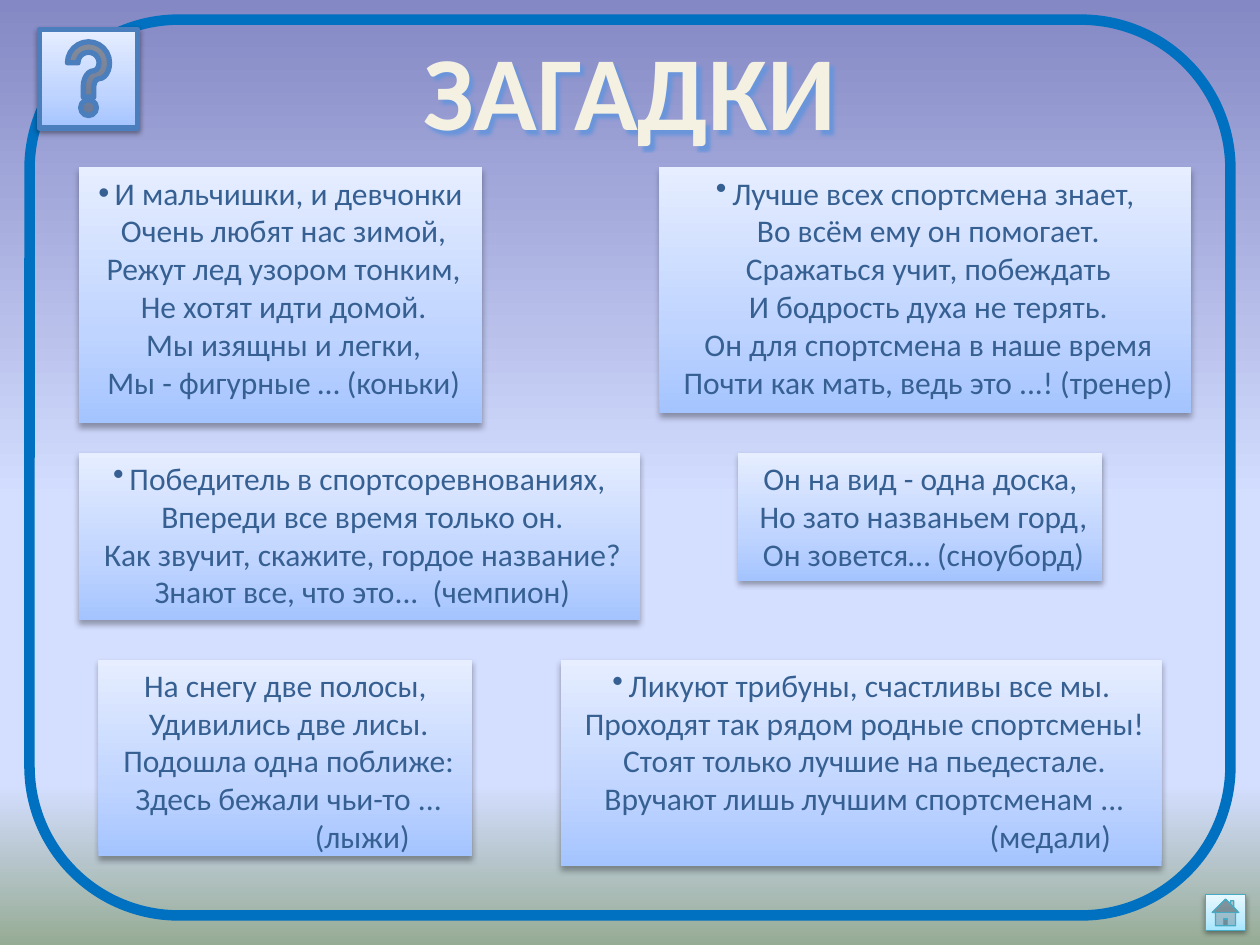
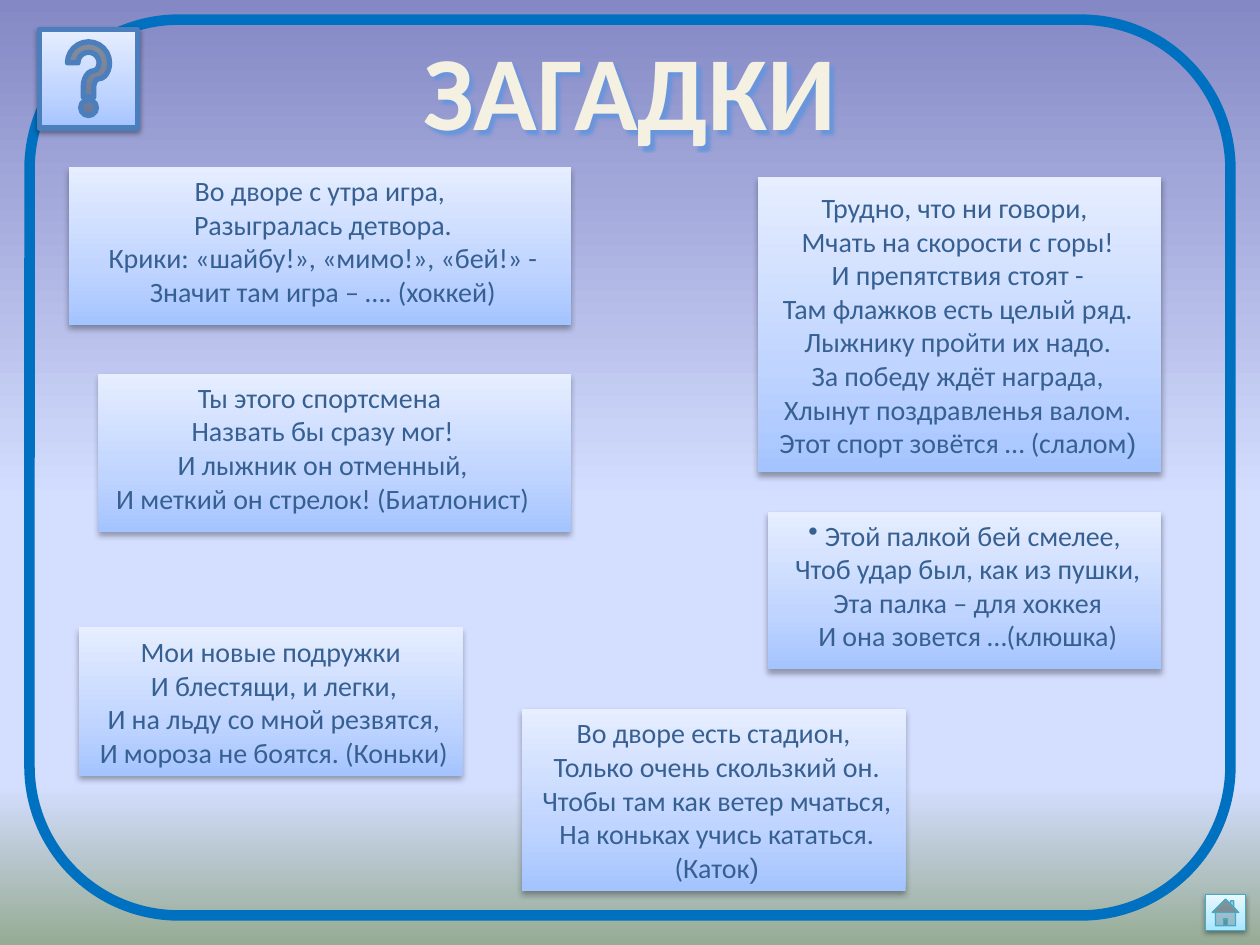
"""Build two slides of sports riddles on shared framed pages."""
from lxml import etree
from pptx import Presentation, util as u
from pptx.dml.color import RGBColor
from pptx.enum import shapes, text
from pptx.oxml.ns import qn

TITLE = "ЗАГАДКИ"
FONT, CLOSING_FONT = "Calibri", "Arial"
TEXT, CREAM, TITLE_EDGE, TITLE_SHADE = "376092", "F4F1E3", "054697", "6A95DB"
FRAME, HELP_EDGE, HOME_EDGE = "0070C0", "4B7EBC", "46AAC5"
SKY = [(0, "8488C4"), (53, "D4DEFF"), (83, "D4DEFF"), (100, "96AB94")]
BLUE = [(0, "A4C4FF"), (35, "BFD4FF"), (100, "E6EEFF")]
AQUA = [(0, "A7E6FF"), (35, "C1EDFF"), (100, "E7F8FF")]
CARD_SHADOW = dict(color="000000", alpha=32, blur=3.5, dist=2.2, angle=90)
BUTTON_SHADOW = dict(color="000000", alpha=38, blur=3.1, dist=1.6, angle=90)
TITLE_SHADOW = dict(color=TITLE_SHADE, alpha=100, blur=1, dist=2.5, angle=45)

COLUMNS, ROWS = 128, 96
WIDTH, HEIGHT = u.Inches(10), u.Inches(7.5)
TITLE_PLACE, FRAME_PLACE = (22, 3, 84, 12), (3, 2, 122, 91)
BUTTONS = [
    (shapes.MSO_SHAPE.ACTION_BUTTON_HELP, (4, 3, 10, 10), BLUE, HELP_EDGE, 3),
    (shapes.MSO_SHAPE.ACTION_BUTTON_HOME, (122.5, 90.9, 4, 3.6), AQUA, HOME_EDGE, 0.75),
]
LINE_INDENT, BULLET_INDENT = 0.05, 0.13
TOP, MIDDLE = text.MSO_ANCHOR.TOP, text.MSO_ANCHOR.MIDDLE

PAGES = [
    dict(size=18, cards=[
        dict(place=(8, 17, 41, 26), bullet=True, lines=[
            "И мальчишки, и девчонки", "Очень любят нас зимой,",
            "Режут лед узором тонким,", "Не хотят идти домой.",
            "Мы изящны и легки,", "Мы - фигурные … (коньки)"]),
        dict(place=(67, 17, 54, 25), bullet=True, lines=[
            "Лучше всех спортсмена знает,", "Во всём ему он помогает.",
            "Сражаться учит, побеждать", "И бодрость духа не терять.",
            "Он для спортсмена в наше время",
            "Почти как мать, ведь это ...! (тренер)"]),
        dict(place=(8, 46, 57, 17), bullet=True, lines=[
            "Победитель в спортсоревнованиях,", "Впереди все время только он.",
            "Как звучит, скажите, гордое название?",
            "Знают все, что это...  (чемпион)"]),
        dict(place=(75, 46, 37, 13), lines=[
            "Он на вид - одна доска,", "Но зато названьем горд,",
            "Он зовется… (сноуборд)"]),
        dict(place=(10, 67, 38, 20), answer_indent=1.22, lines=[
            "На снегу две полосы,", "Удивились две лисы.",
            "Подошла одна поближе:", "Здесь бежали чьи-то ...", "(лыжи)"]),
        dict(place=(57, 67, 61, 21), bullet=True, answer_indent=3, lines=[
            "Ликуют трибуны, счастливы все мы.",
            "Проходят так рядом родные спортсмены!",
            "Стоят только лучшие на пьедестале.",
            "Вручают лишь лучшим спортсменам ...", "(медали)"]),
    ]),
    dict(size=16, cards=[
        dict(place=(7, 17, 51, 16), lines=[
            "Во дворе с утра игра,", "Разыгралась детвора.",
            "Крики: «шайбу!», «мимо!», «бей!» -",
            "Значит там игра – …. (хоккей)"]),
        dict(place=(77, 18, 41, 30), anchor=MIDDLE, insets=(0.1, 0.18),
             closing=True, lines=[
            "Трудно, что ни говори,", "Мчать на скорости с горы!",
            "И препятствия стоят -", "Там флажков есть целый ряд.",
            "Лыжнику пройти их надо.", "За победу ждёт награда,",
            "Хлынут поздравленья валом.", "Этот спорт зовётся … (слалом)"]),
        dict(place=(10, 38, 48, 16), insets=(0, 0.24), lines=[
            "Ты этого спортсмена", "Назвать бы сразу мог!",
            "И лыжник он отменный,", "И меткий он стрелок! (Биатлонист)"]),
        dict(place=(78, 52, 40, 16), bullet=True, lines=[
            "Этой палкой бей смелее,", "Чтоб удар был, как из пушки,",
            "Эта палка – для хоккея", "И она зовется …(клюшка)"]),
        dict(place=(8, 63.75, 39, 15.1), anchor=MIDDLE, lines=[
            "Мои новые подружки", "И блестящи, и легки,",
            "И на льду со мной резвятся,", "И мороза не боятся. (Коньки)"]),
        dict(place=(53, 72, 39, 18.5), anchor=MIDDLE, closing=True, lines=[
            "Во дворе есть стадион,", "Только очень скользкий он.",
            "Чтобы там как ветер мчаться,",
            "На коньках учись кататься. (Каток)"]),
    ]),
]


def rgb(value):
    return RGBColor.from_string(value)


def apply(target, **values):
    for name, value in values.items():
        setattr(target, name, value)


def child(parent, tag, **values):
    return etree.SubElement(parent, qn(tag), {k: str(v) for k, v in values.items()})


def box_of(place):
    left, top, width, height = place
    return (int(left * WIDTH / COLUMNS), int(top * HEIGHT / ROWS),
            int(width * WIDTH / COLUMNS), int(height * HEIGHT / ROWS))


def move(shape, place):
    apply(shape, **dict(zip(("left", "top", "width", "height"), box_of(place))))


def paint_gradient(owner, fill, stops, angle=90):
    fill.gradient()
    fill.gradient_angle = angle
    stop_list = next(owner._element.iter(qn("a:gsLst")))
    for stop in list(stop_list):
        stop_list.remove(stop)
    for position, color in stops:
        child(child(stop_list, "a:gs", pos=position * 1000), "a:srgbClr", val=color)


def cast_shadow(shape, color, alpha, blur, dist, angle):
    shape.shadow.inherit = False
    effects = next(shape._element.iter(qn("a:effectLst")))
    shadow = child(effects, "a:outerShdw", blurRad=u.Pt(blur), dist=u.Pt(dist),
                   dir=angle * 60000, algn="ctr", rotWithShape=0)
    child(child(shadow, "a:srgbClr", val=color), "a:alpha", val=alpha * 1000)


def add_span(para, words, size, color, font=FONT, bold=False):
    span = para.add_run()
    span.text = words
    apply(span.font, name=font, size=u.Pt(size), bold=bold)
    span.font.color.rgb = rgb(color)
    return span


def add_title(page):
    title = page.shapes.title
    move(title, TITLE_PLACE)
    apply(title.text_frame, vertical_anchor=MIDDLE, auto_size=text.MSO_AUTO_SIZE.NONE)
    para = title.text_frame.paragraphs[0]
    para.alignment = text.PP_ALIGN.CENTER
    span = add_span(para, TITLE, 60, CREAM, bold=True)
    edge = etree.Element(qn("a:ln"), w=str(u.Pt(1)))
    child(child(edge, "a:solidFill"), "a:srgbClr", val=TITLE_EDGE)
    span._r.get_or_add_rPr().insert(0, edge)
    cast_shadow(title, **TITLE_SHADOW)


def add_outlined(page, kind, place, color, weight):
    shape = page.shapes.add_shape(kind, *box_of(place))
    shape.line.color.rgb = rgb(color)
    shape.line.width = u.Pt(weight)
    return shape


def write_riddle(frame, size, lines, bullet=False, answer_indent=None, closing=False):
    for number, line in enumerate(lines):
        para = frame.add_paragraph() if number else frame.paragraphs[0]
        apply(para, alignment=text.PP_ALIGN.CENTER, space_before=u.Pt(0))
        marks = para._p.get_or_add_pPr()
        bulleted = bullet and number == 0
        last = number == len(lines) - 1
        indent = LINE_INDENT if number else 0
        if bulleted:
            indent = BULLET_INDENT
        elif last and answer_indent:
            indent = answer_indent
        marks.set("marL", str(u.Inches(indent)))
        marks.set("indent", str(-u.Inches(indent) if bulleted else 0))
        if bulleted:
            child(marks, "a:buChar", char="•")
        else:
            child(marks, "a:buNone")
        if last and closing:
            add_span(para, line[:-1], size, TEXT)
            add_span(para, line[-1], size, TEXT, CLOSING_FONT)
        else:
            add_span(para, line, size, TEXT)


def fill_card(card, size, place, anchor=TOP, insets=(0.1, 0.1), **riddle):
    move(card, place)
    paint_gradient(card, card.fill, BLUE)
    card.line.fill.background()
    cast_shadow(card, **CARD_SHADOW)
    left, right = insets
    apply(card.text_frame, word_wrap=True, auto_size=text.MSO_AUTO_SIZE.NONE,
          vertical_anchor=anchor, margin_left=u.Inches(left),
          margin_right=u.Inches(right), margin_top=u.Inches(0.05),
          margin_bottom=u.Inches(0.05))
    write_riddle(card.text_frame, size, **riddle)


def build_page(deck, size, cards):
    page = deck.slides.add_slide(deck.slide_layouts[0])
    add_title(page)
    frame = add_outlined(page, shapes.MSO_SHAPE.ROUNDED_RECTANGLE, FRAME_PLACE, FRAME, 6)
    frame.fill.background()
    frame.shadow.inherit = False
    for kind, place, stops, edge, weight in BUTTONS:
        button = add_outlined(page, kind, place, edge, weight)
        paint_gradient(button, button.fill, stops)
        cast_shadow(button, **BUTTON_SHADOW)
    for number, card in enumerate(cards):
        if number:
            shape = page.shapes.add_shape(shapes.MSO_SHAPE.RECTANGLE, *box_of(card["place"]))
        else:
            shape = page.placeholders[1]
        fill_card(shape, size, **card)


def main():
    deck = Presentation()
    apply(deck, slide_width=WIDTH, slide_height=HEIGHT)
    master = deck.slide_master
    paint_gradient(master, master.background.fill, SKY, angle=270)
    for page in PAGES:
        build_page(deck, **page)
    deck.save("out.pptx")


if __name__ == "__main__":
    main()
